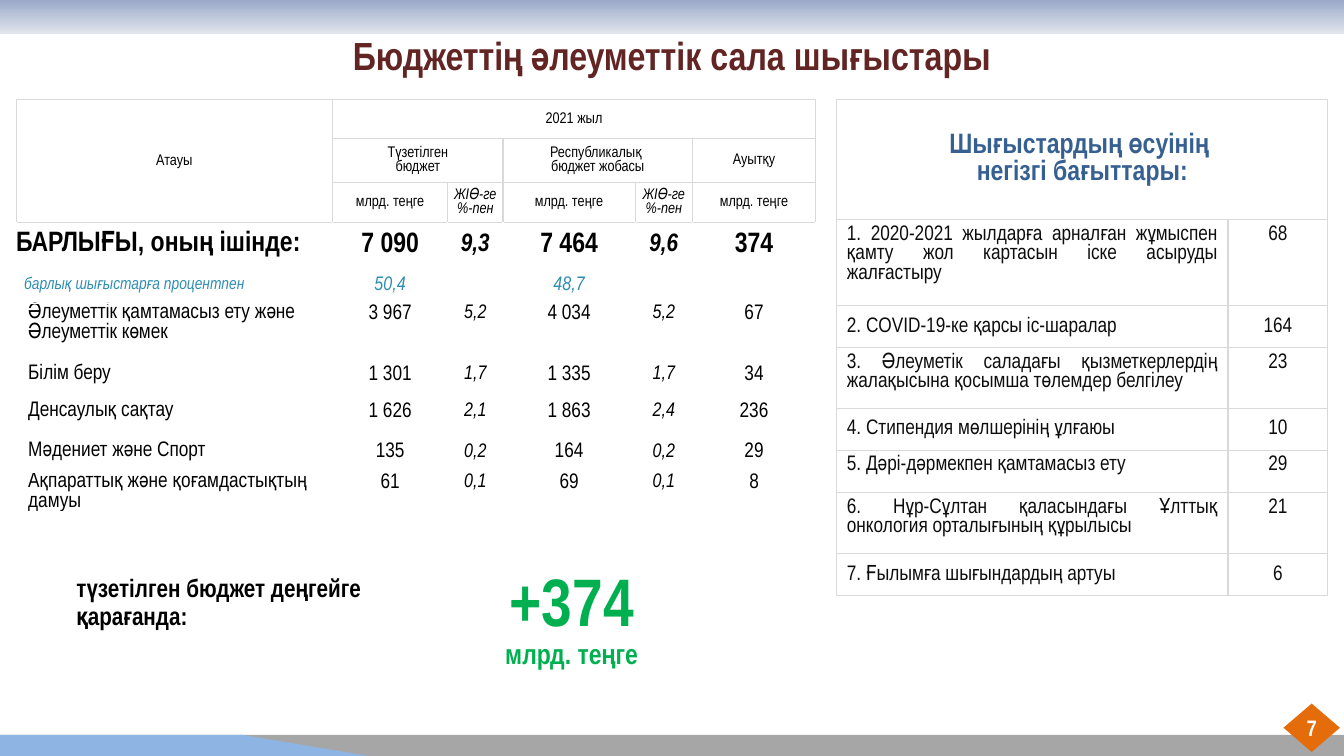
from dataclasses import dataclass

import lxml.etree
import pptx
import pptx.dml.color
import pptx.enum.shapes
import pptx.enum.text
import pptx.oxml.ns
import pptx.util

Inches = pptx.util.Inches
Pt = pptx.util.Pt
Align = pptx.enum.text.PP_ALIGN
Anchor = pptx.enum.text.MSO_ANCHOR
Kind = pptx.enum.shapes.MSO_SHAPE
FONT = "Arial Narrow"
GRID = "D9D9D9"
PAD = (0.1, 0.05, 0.1, 0.05)
TIGHT = (0.01, 0.01, 0.01, 0)


@dataclass
class Line:
    name: str
    values: tuple
    size: float = 15
    rate: float = 14
    color: str = "000000"
    bold: bool = False
    slant: bool = False
    indent: float = 0.12
    middle: bool = True


@dataclass
class Goal:
    name: str
    value: str
    height: float
    middle: bool = False


@dataclass
class Block:
    kind: int
    left: float
    top: float
    width: float
    height: float
    color: str


LINES = [
    Line("БАРЛЫҒЫ, оның ішінде:", ("7 090", "9,3", "7 464", "9,6", "374"), 20, 18, bold=True, indent=0),
    Line("барлық шығыстарға процентпен", ("50,4", "", "48,7", "", ""), 14,
         color="2F8DB3", slant=True, indent=0.08),
    Line("Әлеуметтік қамтамасыз ету және Әлеуметтік көмек", ("3 967", "5,2", "4 034", "5,2", "67"), middle=False),
    Line("Білім беру", ("1 301", "1,7", "1 335", "1,7", "34")),
    Line("Денсаулық сақтау", ("1 626", "2,1", "1 863", "2,4", "236")),
    Line("Мәдениет және Спорт", ("135", "0,2", "164", "0,2", "29")),
    Line("Ақпараттық және қоғамдастықтың дамуы", ("61", "0,1", "69", "0,1", "8"), middle=False),
]
HEADS = [
    (0, 0, 2, 0, ("Атауы",)),
    (0, 1, 0, 5, ("2021 жыл",)),
    (1, 1, 1, 2, ("Түзетілген\nбюджет",)),
    (1, 3, 1, 4, ("Республикалық ", "бюджет жобасы")),
    (1, 5, 1, 5, ("Ауытқу",)),
]
GOALS = [
    Goal("1. 2020-2021 жылдарға арналған жұмыспен қамту жол картасын іске асыруды жалғастыру", "68", 0.85),
    Goal("2. COVID-19-ке қарсы іс-шаралар", "164", 0.42, True),
    Goal("3. Әлеуметік саладағы қызметкерлердің жалақысына қосымша төлемдер белгілеу ", "23", 0.6),
    Goal("4. Стипендия мөлшерінің ұлғаюы", "10", 0.42, True),
    Goal("5. Дәрі-дәрмекпен қамтамасыз ету", "29", 0.42),
    Goal("6. Нұр-Сұлтан қаласындағы Ұлттық онкология орталығының құрылысы", "21", 0.6),
    Goal("7. Ғылымға шығындардың артуы", "6", 0.42, True),
]
BLOCKS = [
    Block(Kind.RECTANGLE, 0, 7.29, 13.33, 0.21, "A6A6A6"),
    Block(Kind.RECTANGLE, 0, 7.29, 2.41, 0.21, "8EB4E3"),
    Block(Kind.RIGHT_TRIANGLE, 2.4, 7.29, 1.26, 0.21, "8EB4E3"),
]


def tint(code: str):
    return pptx.dml.color.RGBColor.from_string(code)


def write(frame, *texts: str, sizes=(15,), color="000000", bold=False, slant=False,
          align=Align.CENTER, space=0.9) -> None:
    for i, text in enumerate(texts):
        par = frame.add_paragraph() if i else frame.paragraphs[0]
        par.text = text
        par.alignment = align
        par.line_spacing = space
        for run in par.runs:
            font = run.font
            font.name, font.size = FONT, Pt(sizes[min(i, len(sizes) - 1)])
            font.bold, font.italic = bold, slant
            font.color.rgb = tint(color)


def edge(cell, sides: str) -> None:
    props = cell._tc.get_or_add_tcPr()
    for side in sides:
        line = lxml.etree.SubElement(props, pptx.oxml.ns.qn(f"a:ln{side}"), w=str(Pt(1)))
        fill = lxml.etree.SubElement(line, pptx.oxml.ns.qn("a:solidFill"))
        lxml.etree.SubElement(fill, pptx.oxml.ns.qn("a:srgbClr"), val=GRID)


def fill_cell(cell, *texts: str, pad=(0, 0, 0, 0), middle=True, **style) -> None:
    cell.margin_left, cell.margin_top, cell.margin_right, cell.margin_bottom = map(Inches, pad)
    cell.vertical_anchor = Anchor.MIDDLE if middle else Anchor.TOP
    if any(texts):
        write(cell.text_frame, *texts, space=1.0, **style)


def make_grid(slide, left: float, top: float, cols: list, rows: list, framed: int):
    box = map(Inches, (left, top, sum(cols), sum(rows)))
    table = slide.shapes.add_table(len(rows), len(cols), *box).table
    table.first_row = table.horz_banding = False
    for col, width in zip(table.columns, cols):
        col.width = Inches(width)
    for i, height in enumerate(rows):
        table.rows[i].height = Inches(height)
        for j in range(len(cols)):
            cell = table.cell(i, j)
            edge(cell, "LRTB" if i < framed else "T" if i == framed else "")
            cell.fill.background()
            fill_cell(cell)
    return table


def draw_costs(slide) -> None:
    rows = [0.38, 0.44, 0.4, 0.43, 0.37, 0.53, 0.35, 0.38, 0.42, 0.31]
    table = make_grid(slide, 0.16, 0.99, [3.14, 1.14, 0.55, 1.31, 0.57, 1.22], rows, 3)
    for top, left, low, right, texts in HEADS:
        cell = table.cell(top, left)
        if (top, left) != (low, right):
            cell.merge(table.cell(low, right))
        fill_cell(cell, *texts, sizes=(11,))
    for j in range(1, 6):
        share = j in (2, 4)
        fill_cell(table.cell(2, j), "ЖІӨ-ге %-пен" if share else "млрд. теңге", sizes=(11,), slant=share)
    for i, line in enumerate(LINES, 3):
        look = dict(color=line.color, bold=line.bold, middle=line.middle)
        size = 12 if line.slant else line.size
        fill_cell(table.cell(i, 0), line.name, pad=(line.indent, 0, 0, 0), sizes=(size,),
                  slant=line.slant, align=Align.LEFT, **look)
        for j, value in enumerate(line.values, 1):
            share = j in (2, 4)
            fill_cell(table.cell(i, j), value, pad=TIGHT, sizes=(line.rate if share else line.size,),
                      slant=share or line.slant, **look)


def draw_goals(slide) -> None:
    rows = [1.19] + [goal.height for goal in GOALS]
    table = make_grid(slide, 8.3, 0.99, [3.88, 0.99], rows, len(rows))
    head = table.cell(0, 0)
    head.merge(table.cell(0, 1))
    fill_cell(head, "Шығыстардың өсуінің ", "негізгі бағыттары:", pad=PAD, sizes=(20,), color="376092", bold=True)
    for i, goal in enumerate(GOALS, 1):
        for j, (text, align) in enumerate(((goal.name, Align.JUSTIFY), (goal.value, Align.CENTER))):
            fill_cell(table.cell(i, j), text, pad=PAD, middle=goal.middle, color="0D0D0D", align=align)


def add_note(slide, box: tuple, *texts: str, **style) -> None:
    frame = slide.shapes.add_textbox(*map(Inches, box)).text_frame
    frame.word_wrap = True
    frame.vertical_anchor = Anchor.MIDDLE
    write(frame, *texts, bold=True, **style)


def add_block(slide, block: Block):
    box = map(Inches, (block.left, block.top, block.width, block.height))
    shape = slide.shapes.add_shape(block.kind, *box)
    shape.shadow.inherit = False
    shape.line.fill.background()
    shape.fill.solid()
    shape.fill.fore_color.rgb = tint(block.color)
    return shape


def main() -> None:
    deck = pptx.Presentation()
    deck.slide_width, deck.slide_height = Inches(13.33), Inches(7.5)
    slide = deck.slides.add_slide(deck.slide_layouts[5])
    title = slide.shapes.title
    title.left, title.top, title.width, title.height = map(Inches, (0, 0.29, 13.33, 0.56))
    title.text_frame.vertical_anchor = Anchor.MIDDLE
    write(title.text_frame, "Бюджеттің әлеуметтік сала шығыстары", sizes=(28,), color="632523", bold=True)
    draw_costs(slide)
    add_note(slide, (4.67, 5.69, 2, 0.91), "+374", "млрд. теңге", sizes=(48, 20), color="00B050")
    add_note(slide, (0.66, 5.62, 3.55, 0.73), "түзетілген бюджет деңгейге қарағанда:", sizes=(18,), align=Align.LEFT)
    draw_goals(slide)
    for block in BLOCKS:
        add_block(slide, block)
    band = add_block(slide, Block(Kind.RECTANGLE, -0.02, 0, 13.36, 0.34, "9BAAC9"))
    band.fill.gradient()
    band.fill.gradient_angle = 270
    for stop, code in zip(band.fill.gradient_stops, ("9BAAC9", "E2E5ED")):
        stop.color.rgb = tint(code)
    badge = add_block(slide, Block(Kind.FLOWCHART_DECISION, 12.73, 6.98, 0.56, 0.48, "E46C0A")).text_frame
    badge.margin_left = badge.margin_right = badge.margin_top = badge.margin_bottom = 0
    badge.vertical_anchor = Anchor.MIDDLE
    write(badge, "7", sizes=(16,), color="FFFFFF", bold=True, space=1.0)
    deck.save("out.pptx")


if __name__ == "__main__":
    main()
